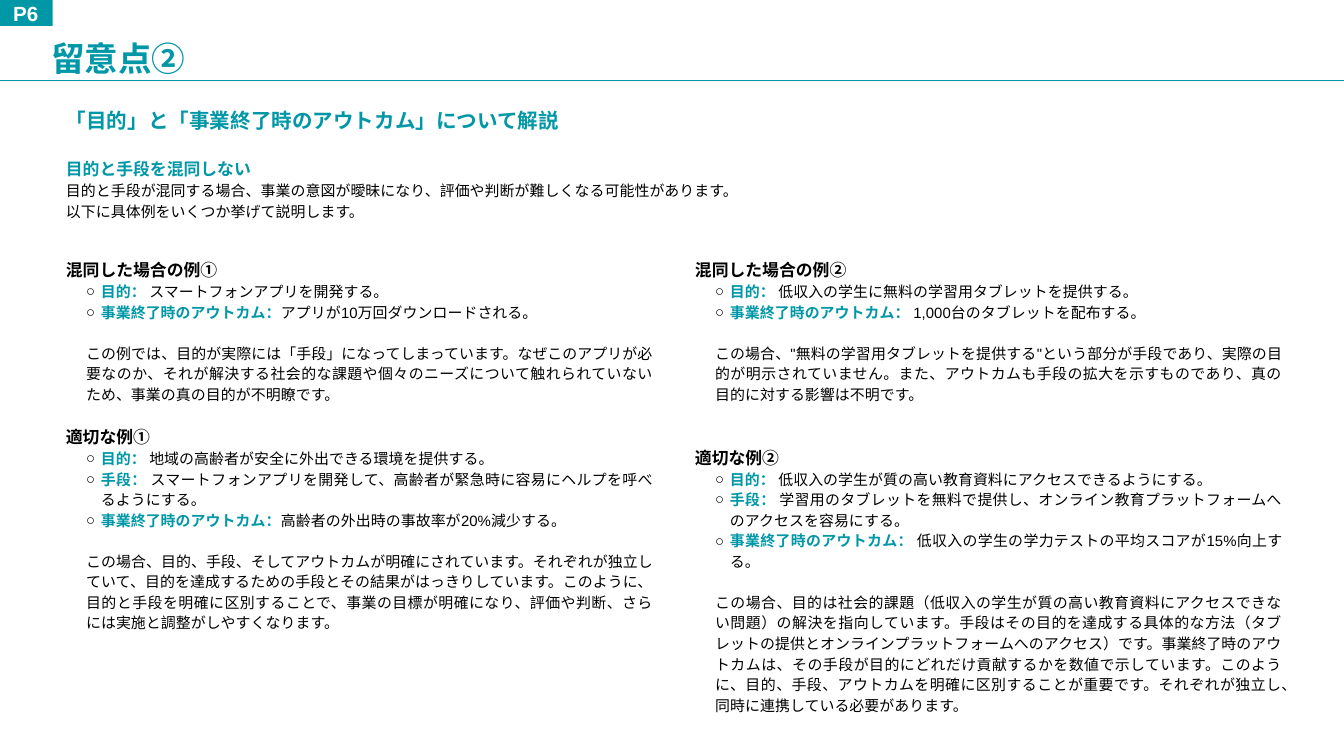
from lxml import etree
from pptx import Presentation
from pptx.dml.color import RGBColor
from pptx.enum import shapes, text
from pptx.oxml import ns
from pptx.util import Pt

TEAL, BLACK, WHITE = "0097A7", "000000", "FFFFFF"
GAP = 11


def rgb(code):
    return RGBColor.from_string(code)


def place(shape, box):
    shape.left, shape.top, shape.width, shape.height = map(Pt, box)


def frame(shape, pads, anchor=text.MSO_ANCHOR.TOP):
    body = shape.text_frame
    body.word_wrap = True
    body.auto_size = text.MSO_AUTO_SIZE.NONE
    body.vertical_anchor = anchor
    (body.margin_left, body.margin_top,
     body.margin_right, body.margin_bottom) = map(Pt, pads)
    return body


def style(font, size, color, bold):
    font.name = "Arial"
    font.size = Pt(size)
    font.bold = bold
    font.color.rgb = rgb(color)


def mark(para, left, hang, sign):
    props = para._p.get_or_add_pPr()
    props.set("marL", str(Pt(left)))
    props.set("indent", str(Pt(-hang)))
    if sign:
        tint = etree.SubElement(props, ns.qn("a:buClr"))
        etree.SubElement(tint, ns.qn("a:srgbClr"), val=BLACK)
        etree.SubElement(props, ns.qn("a:buChar"), char=sign)
    else:
        etree.SubElement(props, ns.qn("a:buNone"))


def add_para(body, parts, size, gap=0, left=0, hang=0, sign=None,
             align=text.PP_ALIGN.LEFT, space=1.15):
    para = body.paragraphs[0]
    if para.runs:
        para = body.add_paragraph()
    mark(para, left, hang, sign)
    para.level = 1 if left else 0
    para.alignment = align
    para.line_spacing = space
    para.space_before = Pt(gap)
    para.space_after = Pt(0)
    for words, color, bold in parts:
        run = para.add_run()
        run.text = words
        if len(parts) > 1:
            style(run.font, size, color, bold)
    if len(parts) == 1:
        style(para.font, size, *parts[0][1:])


def draw_head(slide, box, page, name):
    left, top, width, height = box
    rule = slide.shapes.add_connector(
        shapes.MSO_CONNECTOR.STRAIGHT, Pt(left), Pt(top + height),
        Pt(left + width), Pt(top + height))
    rule.line.color.rgb = rgb(TEAL)
    rule.line.width = Pt(0.75)
    etree.SubElement(rule._element.spPr, ns.qn("a:effectLst"))

    badge = slide.shapes.add_shape(
        shapes.MSO_SHAPE.RECTANGLE, Pt(left), Pt(top), Pt(28.3), Pt(13.9))
    badge.shadow.inherit = False
    badge.fill.solid()
    badge.fill.fore_color.rgb = rgb(TEAL)
    badge.line.fill.background()
    body = frame(badge, [7.2] * 4, text.MSO_ANCHOR.MIDDLE)
    add_para(body, [(page, WHITE, True)], 11, space=1)

    title = slide.shapes.title
    place(title, (left + 20.2, top + 22.3, 406.8, 18))
    body = frame(title, (7.2, 3.6, 7.2, 3.6), text.MSO_ANCHOR.MIDDLE)
    add_para(body, [(name, TEAL, True)], 18, space=1)


def draw_intro(slide, box, lead, head, lines):
    shape = slide.shapes.add_textbox(*map(Pt, box))
    body = frame(shape, (4.3, 1.4, 4.3, 1.4))
    add_para(body, [(lead, TEAL, True)], 11)
    add_para(body, [(head, TEAL, True)], 9, gap=12.2)
    for line in lines:
        add_para(body, [(line, BLACK, False)], 8)


def draw_column(shape, box, cases):
    place(shape, box)
    body = frame(shape, (4.3, 1.4 + GAP, 4.3, 1.4))
    both = text.PP_ALIGN.JUSTIFY
    for head, gap, items, note in cases:
        add_para(body, [(head, BLACK, True)], 9, gap, align=both)
        for label, words in items:
            add_para(body, [(label, TEAL, True), (words, BLACK, False)], 8,
                     left=18.7, hang=7.9, sign="○", align=both)
        add_para(body, [(note, BLACK, False)], 8, GAP, left=10.8, align=both)


FIRST = [
    ("混同した場合の例①", 0, [
        ("目的： ", "スマートフォンアプリを開発する。"),
        ("事業終了時のアウトカム：", "アプリが10万回ダウンロードされる。")],
     "この例では、目的が実際には「手段」になってしまっています。なぜこのアプリが必要なのか、"
     "それが解決する社会的な課題や個々のニーズについて触れられていないため、事業の真の目的が不明瞭です。"),
    ("適切な例①", GAP, [
        ("目的： ", "地域の高齢者が安全に外出できる環境を提供する。"),
        ("手段： ", "スマートフォンアプリを開発して、高齢者が緊急時に容易にヘルプを呼べるようにする。"),
        ("事業終了時のアウトカム：", "高齢者の外出時の事故率が20%減少する。")],
     "この場合、目的、手段、そしてアウトカムが明確にされています。それぞれが独立していて、"
     "目的を達成するための手段とその結果がはっきりしています。このように、目的と手段を明確に区別することで、"
     "事業の目標が明確になり、評価や判断、さらには実施と調整がしやすくなります。"),
]
SECOND = [
    ("混同した場合の例②", 0, [
        ("目的： ", "低収入の学生に無料の学習用タブレットを提供する。"),
        ("事業終了時のアウトカム： ", "1,000台のタブレットを配布する。")],
     "この場合、\"無料の学習用タブレットを提供する\"という部分が手段であり、実際の目的が明示されていません。"
     "また、アウトカムも手段の拡大を示すものであり、真の目的に対する影響は不明です。"),
    ("適切な例②", 2 * GAP, [
        ("目的： ", "低収入の学生が質の高い教育資料にアクセスできるようにする。"),
        ("手段： ", "学習用のタブレットを無料で提供し、オンライン教育プラットフォームへのアクセスを容易にする。"),
        ("事業終了時のアウトカム： ", "低収入の学生の学力テストの平均スコアが15%向上する。")],
     "この場合、目的は社会的課題（低収入の学生が質の高い教育資料にアクセスできない問題）の解決を指向しています。"
     "手段はその目的を達成する具体的な方法（タブレットの提供とオンラインプラットフォームへのアクセス）です。"
     "事業終了時のアウトカムは、その手段が目的にどれだけ貢献するかを数値で示しています。"
     "このように、目的、手段、アウトカムを明確に区別することが重要です。"
     "それぞれが独立し、同時に連携している必要があります。"),
]


def main():
    deck = Presentation()
    deck.slide_width, deck.slide_height = Pt(720), Pt(405)
    slide = deck.slides.add_slide(deck.slide_layouts[3])
    draw_head(slide, (0, 0, 720, 43.2), "P6", "留意点②")
    draw_intro(slide, (31, 54.7, 609, 64),
               "「目的」と「事業終了時のアウトカム」について解説",
               "目的と手段を混同しない",
               ["目的と手段が混同する場合、事業の意図が曖昧になり、評価や判断が難しくなる可能性があります。",
                "以下に具体例をいくつか挙げて説明します。"])
    left, right = list(slide.placeholders)[1:]
    draw_column(left, (31, 125.3, 323.3, 217.4), FIRST)
    draw_column(right, (368, 125.3, 323.3, 262), SECOND)
    deck.save("out.pptx")


if __name__ == "__main__":
    main()
